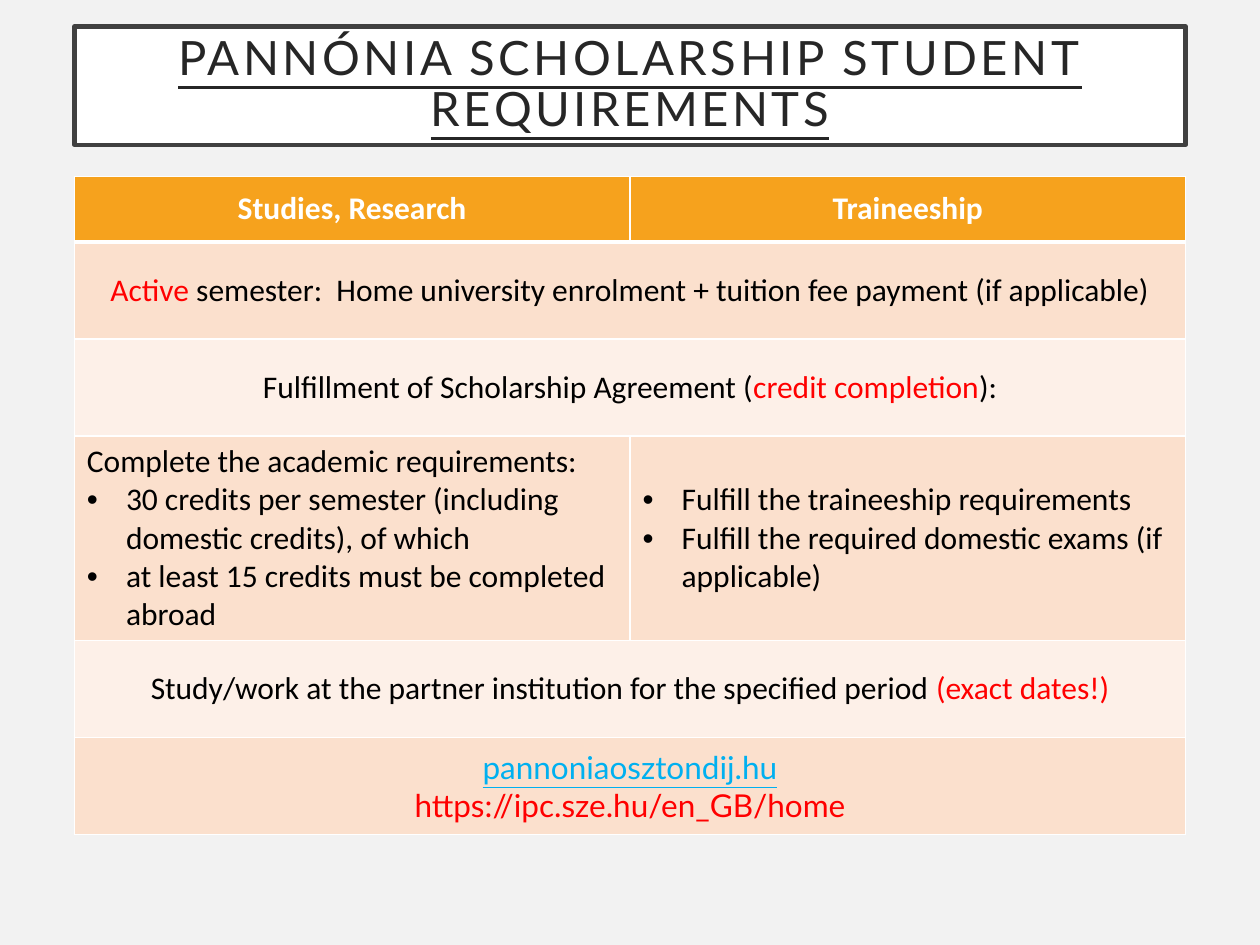
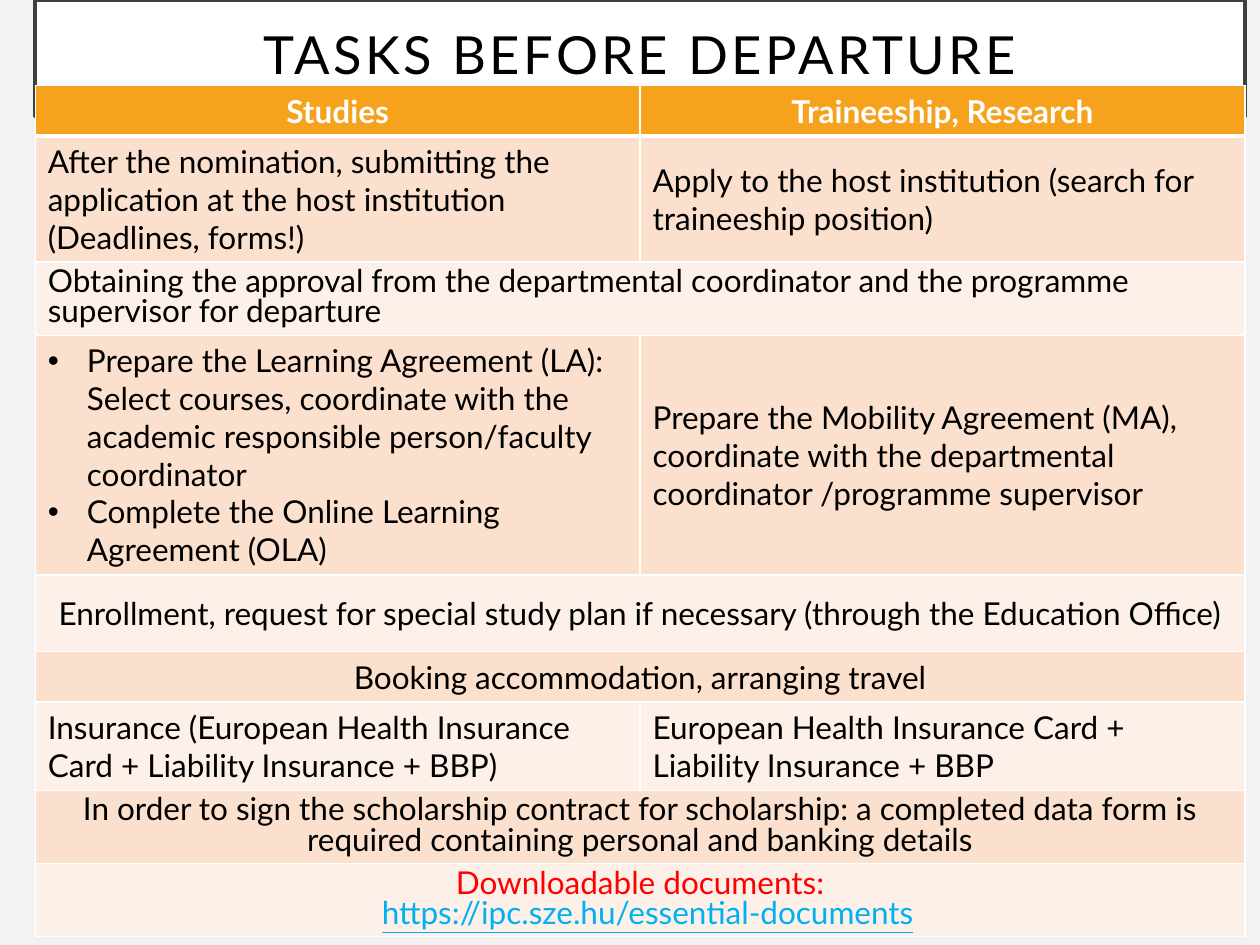
from lxml.etree import SubElement
from pptx import Presentation
from pptx.dml.color import RGBColor
from pptx.enum.shapes import MSO_SHAPE
from pptx.enum.text import MSO_ANCHOR, PP_ALIGN
from pptx.oxml.ns import qn
from pptx.util import Inches, Pt

# Shared look
BACKGROUND, WHITE, BLACK, FRAME = "F2F2F2", "FFFFFF", "000000", "404040"
HEADER_FILL, BAND_FILLS = "F6A21D", ("FBE0CD", "FDF0E8")
RED, LINK_BLUE = "FF0000", "00B0F0"
BULLET_INDENT = 0.31


def text(*runs, **layout):
    """A paragraph; each run is a string or (string, run style)."""
    return {"runs": runs, **layout}


def centred(*runs, **layout):
    return text(*runs, align=PP_ALIGN.CENTER, **layout)


def bullet(*runs):
    return text(*runs, bullet=True)


def red(words, **style):
    return words, {"color": RED, **style}


def link(words):
    return words, {"color": LINK_BLUE, "underline": True, "font": "Lato"}


# Content: a row is a list of cells, a cell a list of paragraphs;
# a row with one cell spans both columns
REQUIREMENTS = {
    "title": "PANNÓNIA SCHOLARSHIP STUDENT REQUIREMENTS",
    "title_box": (0.59, 0.21, 8.82, 0.94),
    "title_size": 27,
    "title_color": "262626",
    "font": "Calibri",
    "table_top": 1.4,
    "row_heights": [0.52] + [0.77] * 5,
    "headers": ["Studies, Research", "Traineeship"],
    "rows": [
        [[centred(red("Active"), " semester:  Home university enrolment + "
                  "tuition fee payment (if applicable)")]],
        [[centred("Fulfillment of Scholarship Agreement (",
                  red("credit completion"), "):")]],
        [[text("Complete the academic requirements:"),
          bullet("30 credits per semester (including domestic credits), of which"),
          bullet("at least 15 credits must be completed abroad")],
         [bullet("Fulfill the traineeship requirements"),
          bullet("Fulfill the required domestic exams (if applicable)")]],
        [[centred("Study/work at the partner institution for the specified period ",
                  red("(exact dates!)"))]],
        [[centred(link("pannoniaosztondij.hu")),
          centred(red("https://ipc.sze.hu/en_GB/home", font="Lato"))]],
    ],
}

TASKS = {
    "title": "TASKS BEFORE DEPARTURE",
    "title_box": (0.28, 0, 9.6, 0.92),
    "title_size": 30,
    "title_color": BLACK,
    "font": "Lato",
    "table_top": 0.68,
    "row_heights": [0.35, 0.88, 0.51, 1.67, 0.61, 0.35, 0.67, 0.51, 0.51],
    "headers": ["Studies", "Traineeship, Research"],
    "rows": [
        [[text("After the nomination, submitting the application at the host "
               "institution (Deadlines, forms!)")],
         [text("Apply to the host institution (search for traineeship position)")]],
        [[text("Obtaining the approval from the departmental coordinator and the "
               "programme supervisor for departure", spacing=0.8)]],
        [[bullet("Prepare the Learning Agreement (LA): Select courses, coordinate "
                 "with the academic responsible person/faculty coordinator"),
          bullet("Complete the Online Learning Agreement (OLA)")],
         [text("Prepare the Mobility Agreement (MA), coordinate with the "
               "departmental coordinator /programme supervisor")]],
        [[centred("Enrollment, request for special study plan if necessary "
                  "(through the Education Office)")]],
        [[centred("Booking accommodation, arranging travel")]],
        [[text("Insurance (European Health Insurance Card + Liability Insurance + BBP)")],
         [text("European Health Insurance Card + Liability Insurance + BBP")]],
        [[centred("In order to sign the scholarship contract for scholarship: a "
                  "completed data form is required containing personal and "
                  "banking details", spacing=0.8)]],
        [[centred(red("Downloadable documents:"), spacing=0.8),
          centred(link("https://ipc.sze.hu/essential-documents"),
                  spacing=0.8, margin=0.12)]],
    ],
}


def rgb(color):
    return RGBColor.from_string(color)


def add_run(paragraph, words, font, size, color, bold=False, underline=False):
    run = paragraph.add_run()
    run.text = words
    run.font.name, run.font.size = font, Pt(size)
    run.font.bold, run.font.underline = bold, underline
    run.font.color.rgb = rgb(color)
    return run


def fill_text(frame, paragraphs, **base):
    for index, content in enumerate(paragraphs):
        paragraph = frame.add_paragraph() if index else frame.paragraphs[0]
        paragraph.alignment = content.get("align", PP_ALIGN.LEFT)
        paragraph.line_spacing = content.get("spacing", 1.0)
        properties = paragraph._p.get_or_add_pPr()
        if content.get("bullet"):
            properties.set("marL", str(Inches(BULLET_INDENT)))
            properties.set("indent", str(-Inches(BULLET_INDENT)))
            SubElement(properties, qn("a:buFont"), typeface="Arial")
            SubElement(properties, qn("a:buChar"), char="•")
        elif "margin" in content:
            properties.set("marL", str(Inches(content["margin"])))
        for run in content["runs"]:
            words, style = (run, {}) if isinstance(run, str) else run
            add_run(paragraph, words, **{**base, **style})


def add_title(slide, content):
    box = slide.shapes.add_shape(MSO_SHAPE.RECTANGLE, *map(Inches, content["title_box"]))
    box.shadow.inherit = False
    box.fill.solid()
    box.fill.fore_color.rgb = rgb(WHITE)
    box.line.color.rgb = rgb(FRAME)
    box.line.width = Pt(2.5)
    frame = box.text_frame
    frame.word_wrap = True
    frame.vertical_anchor = MSO_ANCHOR.MIDDLE
    frame.margin_left = frame.margin_right = Inches(0.2)
    frame.margin_top = frame.margin_bottom = Inches(0.2)
    paragraph = frame.paragraphs[0]
    paragraph.alignment = PP_ALIGN.CENTER
    paragraph.line_spacing = 0.9
    run = add_run(paragraph, content["title"], "Lato", content["title_size"],
                  content["title_color"], underline=True)
    run.font._element.set("spc", "200")


def style_cell(cell, fill, bottom_width=1):
    cell.vertical_anchor = MSO_ANCHOR.MIDDLE
    properties = cell._tc.get_or_add_tcPr()
    for side in "LRTB":
        width = bottom_width if side == "B" else 1
        border = SubElement(properties, qn(f"a:ln{side}"), w=str(Pt(width)))
        solid = SubElement(border, qn("a:solidFill"))
        SubElement(solid, qn("a:srgbClr"), val=WHITE)
    cell.fill.solid()
    cell.fill.fore_color.rgb = rgb(fill)


def add_table(slide, content):
    left, _, width, _ = content["title_box"]
    heights = content["row_heights"]
    table = slide.shapes.add_table(
        len(heights), 2, Inches(left), Inches(content["table_top"]),
        Inches(width), Inches(sum(heights))).table
    table.first_row = table.horz_banding = False
    for row, height in zip(table.rows, heights):
        row.height = Inches(height)

    # Header row
    for column, header in enumerate(content["headers"]):
        cell = table.cell(0, column)
        style_cell(cell, HEADER_FILL, bottom_width=3)
        fill_text(cell.text_frame, [centred(header)], font=content["font"],
                  size=18, color=WHITE, bold=True)

    # Body rows in alternating bands
    for number, cells in enumerate(content["rows"], start=1):
        for column in range(2):
            style_cell(table.cell(number, column), BAND_FILLS[(number - 1) % 2])
        if len(cells) == 1:
            table.cell(number, 0).merge(table.cell(number, 1))
        for column, paragraphs in enumerate(cells):
            fill_text(table.cell(number, column).text_frame, paragraphs,
                      font=content["font"], size=18, color=BLACK)


def main():
    presentation = Presentation()
    presentation.slide_width, presentation.slide_height = Inches(10), Inches(7.5)
    for content in (REQUIREMENTS, TASKS):
        slide = presentation.slides.add_slide(presentation.slide_layouts[6])
        slide.background.fill.solid()
        slide.background.fill.fore_color.rgb = rgb(BACKGROUND)
        add_title(slide, content)
        add_table(slide, content)
    presentation.save("out.pptx")


if __name__ == "__main__":
    main()
